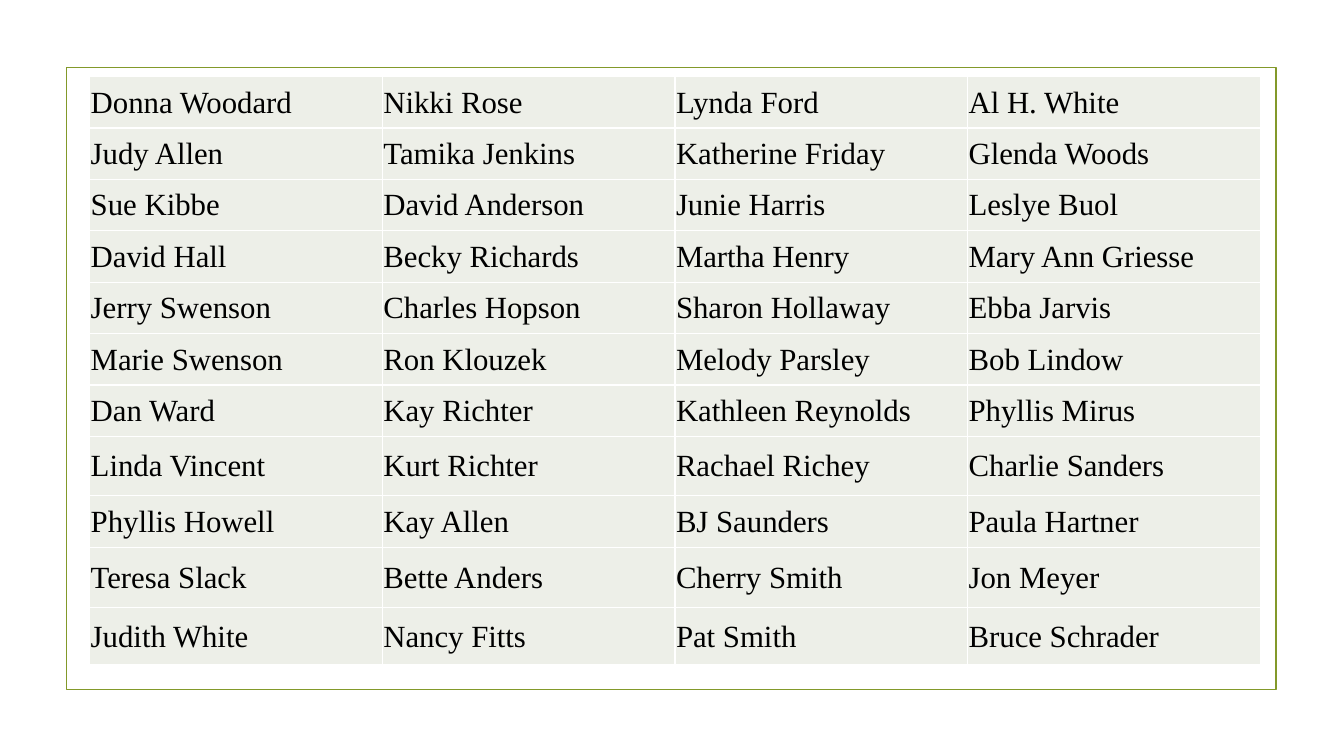
"""Build a slide listing names in a framed four-column table."""
from dataclasses import dataclass

from lxml.etree import SubElement
from pptx import Presentation
from pptx.dml.color import RGBColor
from pptx.enum.shapes import MSO_SHAPE
from pptx.enum.text import MSO_ANCHOR
from pptx.oxml.ns import qn
from pptx.util import Inches, Pt

NAMES = [
    ("Donna Woodard", "Nikki Rose", "Lynda Ford", "Al H. White"),
    ("Judy Allen", "Tamika Jenkins", "Katherine Friday", "Glenda Woods"),
    ("Sue Kibbe", "David Anderson", "Junie Harris", "Leslye Buol"),
    ("David Hall", "Becky Richards", "Martha Henry", "Mary Ann Griesse"),
    ("Jerry Swenson", "Charles Hopson", "Sharon Hollaway", "Ebba Jarvis"),
    ("Marie Swenson", "Ron Klouzek", "Melody Parsley", "Bob Lindow"),
    ("Dan Ward", "Kay Richter", "Kathleen Reynolds", "Phyllis Mirus"),
    ("Linda Vincent", "Kurt Richter", "Rachael Richey", "Charlie Sanders"),
    ("Phyllis Howell", "Kay Allen", "BJ Saunders", "Paula Hartner"),
    ("Teresa Slack", "Bette Anders", "Cherry Smith", "Jon Meyer"),
    ("Judith White", "Nancy Fitts", "Pat Smith", "Bruce Schrader"),
]
ROW_HEIGHT = 0.51
TALL_ROWS = {7: 0.59, 9: 0.6, 10: 0.57}
FRAME_BOX = (0.66, 0.67, 12, 6.17)
TABLE_BOX = (0.89, 0.76, 11.61, 5.85)


@dataclass(frozen=True)
class Theme:
    font: str = "Times New Roman"
    name_size: float = 22
    ink: str = "000000"
    cell: str = "EDEFE8"
    grid: str = "FFFFFF"
    grid_width: float = 1
    frame: str = "83992A"
    frame_width: float = 1.25


THEME = Theme()


def add_frame(slide):
    frame = slide.shapes.add_shape(MSO_SHAPE.RECTANGLE, *map(Inches, FRAME_BOX))
    frame.shadow.inherit = False
    frame.fill.background()
    frame.line.color.rgb = RGBColor.from_string(THEME.frame)
    frame.line.width = Pt(THEME.frame_width)


def add_borders(cell):
    properties = cell._tc.get_or_add_tcPr()
    for side in ("a:lnL", "a:lnR", "a:lnT", "a:lnB"):
        border = SubElement(properties, qn(side), w=str(Pt(THEME.grid_width)))
        fill = SubElement(border, qn("a:solidFill"))
        SubElement(fill, qn("a:srgbClr"), val=THEME.grid)


def fill_cell(cell, name):
    add_borders(cell)
    cell.fill.solid()
    cell.fill.fore_color.rgb = RGBColor.from_string(THEME.cell)
    cell.vertical_anchor = MSO_ANCHOR.MIDDLE
    cell.margin_left = cell.margin_top = cell.margin_right = Inches(0.01)
    cell.margin_bottom = 0
    run = cell.text_frame.paragraphs[0].add_run()
    run.text = name
    run.font.name = THEME.font
    run.font.size = Pt(THEME.name_size)
    run.font.bold = False
    run.font.color.rgb = RGBColor.from_string(THEME.ink)


def add_names(slide):
    columns = len(NAMES[0])
    table = slide.shapes.add_table(len(NAMES), columns, *map(Inches, TABLE_BOX)).table
    table.first_row = table.horz_banding = False
    for column in table.columns:
        column.width = Inches(TABLE_BOX[2] / columns)
    for r, names in enumerate(NAMES):
        table.rows[r].height = Inches(TALL_ROWS.get(r, ROW_HEIGHT))
        for c, name in enumerate(names):
            fill_cell(table.cell(r, c), name)


def main():
    deck = Presentation()
    deck.slide_width, deck.slide_height = Inches(13.33), Inches(7.5)
    slide = deck.slides.add_slide(deck.slide_layouts[6])
    add_frame(slide)
    add_names(slide)
    deck.save("out.pptx")


if __name__ == "__main__":
    main()
